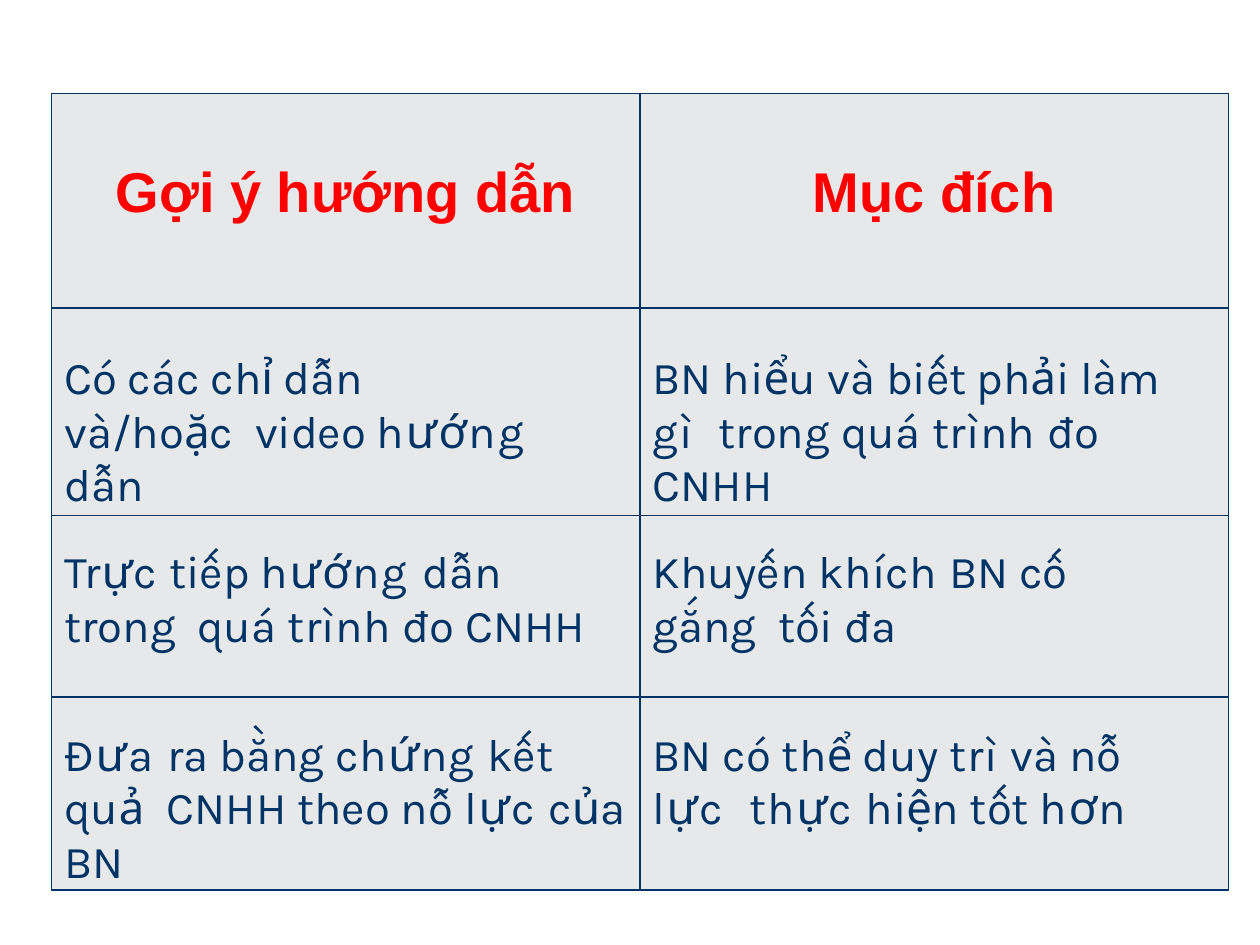
from lxml import etree
from pptx import Presentation
from pptx import util as u
from pptx.dml.color import RGBColor
from pptx.enum import text
from pptx.oxml import ns

NAVY = RGBColor(0x00, 0x33, 0x66)
RED = RGBColor(0xFF, 0x00, 0x00)
GREY = RGBColor(0xE7, 0xE8, 0xEA)

HEADINGS = ["Gợi ý hướng dẫn", "Mục đích"]

# Each cell: its right margin in inches, then (words, letter spacing in points)
BODY = [
    [(0.84, [("Có các ", 0), ("chỉ ", -0.1), ("dẫn và/hoặc  ", 0),
             ("video ", -0.1), ("hướng ", 1.1), ("dẫn", 0)]),
     (0.33, [("BN ", 0), ("hiểu ", -0.1), ("và ", 0), ("biết phải làm ", -0.1),
             ("gì  ", 0.7), ("trong ", 0), ("quá ", 0.1), ("trình ", 0.2),
             ("đo CNHH", 0)])],
    [(0.28, [("Trực ", 0.5), ("tiếp ", -0.1), ("hướng ", 1.1),
             ("dẫn trong  quá ", 0), ("trình ", 0.2), ("đo CNHH", 0)]),
     (0.8, [("Khuyến ", 0), ("khích ", 0.2), ("BN cố gắng  ", 0),
            ("tối ", -0.1), ("đa", 0)])],
    [(0, [("Đưa ", 0.9), ("ra ", -0.1), ("bằng ", 0), ("chứng ", 0.6),
          ("kết ", 0), ("quả  ", 0.1), ("CNHH theo nỗ ", 0), ("lực ", 0.9),
          ("của BN", 0)]),
     (0.5, [("BN có thể duy ", 0), ("trì ", 0.4), ("và nỗ ", 0), ("lực  ", 0.9),
            ("thực ", 0.8), ("hiện ", -0.1), ("tốt ", 0), ("hơn", 0.8)])],
]
BODY_TOPS = [0.36, 0.25, 0.26]
ROW_HEIGHTS = [1.7, 1.65, 1.44, 1.44]


def add_text(paragraph, words, font="Karla", size=26, color=NAVY, bold=False,
             spacing=0):
    """Add one formatted run to a paragraph."""
    run = paragraph.add_run()
    run.text = words
    run.font.name = font
    run.font.size = u.Pt(size)
    run.font.color.rgb = color
    run.font.bold = bold
    if spacing:
        run.font._element.set("spc", str(round(spacing * 100)))


class SlideBuilder:
    """Holds the table style and the current slide."""

    fill = GREY
    border_color = NAVY
    border_width = u.Pt(1)

    def __init__(self, presentation):
        self.width = presentation.slide_width
        self.height = presentation.slide_height
        self.slide = presentation.slides.add_slide(presentation.slide_layouts[6])

    def table(self, left, top, width, row_heights, columns):
        """Place an equal-column table; left, top and width are slide shares."""
        shape = self.slide.shapes.add_table(
            len(row_heights), columns,
            round(self.width * left), round(self.height * top),
            round(self.width * width), u.Inches(sum(row_heights)))
        table = shape.table
        for row, height in zip(table.rows, row_heights):
            row.height = u.Inches(height)
        return table

    def cell(self, cell, runs, top, left=0.0, right=0.0,
             align=text.PP_ALIGN.LEFT, **style):
        """Style a cell and write its runs; margins are in inches."""
        self.borders(cell)
        cell.fill.solid()
        cell.fill.fore_color.rgb = self.fill
        cell.margin_left, cell.margin_right = u.Inches(left), u.Inches(right)
        cell.margin_top, cell.margin_bottom = u.Inches(top), 0
        paragraph = cell.text_frame.paragraphs[0]
        paragraph.alignment = align
        for words, spacing in runs:
            add_text(paragraph, words, spacing=spacing, **style)

    def borders(self, cell):
        properties = cell._tc.get_or_add_tcPr()
        for side in "LRTB":
            line = etree.SubElement(properties, ns.qn(f"a:ln{side}"),
                                    w=str(self.border_width))
            fill = etree.SubElement(line, ns.qn("a:solidFill"))
            etree.SubElement(fill, ns.qn("a:srgbClr"), val=str(self.border_color))


def main():
    presentation = Presentation()
    presentation.slide_width = u.Inches(10)
    presentation.slide_height = u.Inches(7.5)
    builder = SlideBuilder(presentation)
    table = builder.table(0.041, 0.099, 0.934, ROW_HEIGHTS, len(HEADINGS))

    # Header row
    for column, heading in enumerate(HEADINGS):
        builder.cell(table.cell(0, column), [(heading, 0)], top=0.54,
                     align=text.PP_ALIGN.CENTER, font="Arial", size=32,
                     color=RED, bold=True)

    # Guidance and purpose rows
    for row, (cells, top) in enumerate(zip(BODY, BODY_TOPS), start=1):
        for column, (right, runs) in enumerate(cells):
            builder.cell(table.cell(row, column), runs, top=top, left=0.1,
                         right=right)

    presentation.save("out.pptx")


if __name__ == "__main__":
    main()
